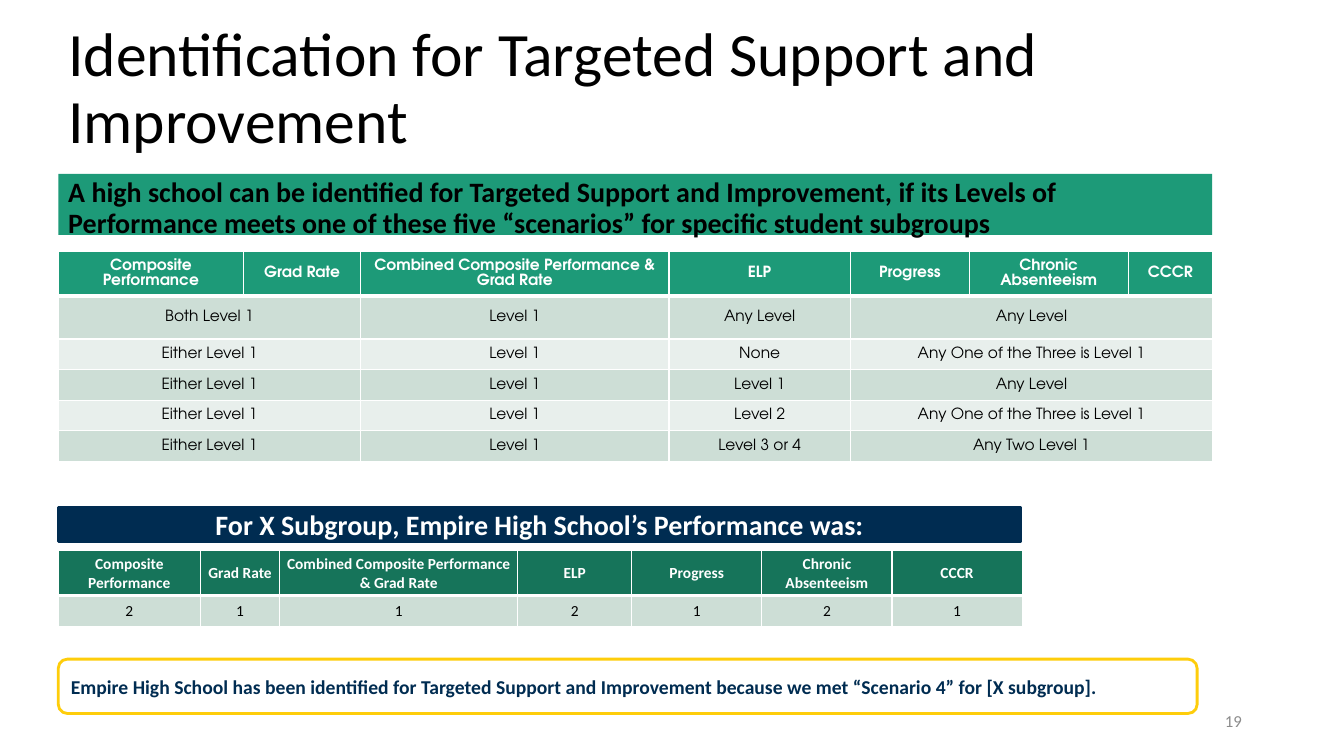
from dataclasses import dataclass

from lxml.etree import SubElement
from pptx import Presentation
from pptx.dml.color import RGBColor
from pptx.enum.shapes import MSO_SHAPE
from pptx.enum.text import MSO_ANCHOR, PP_ALIGN
from pptx.oxml.ns import qn
from pptx.slide import Slide
from pptx.table import _Cell
from pptx.text.text import TextFrame
from pptx.util import Cm, Pt


@dataclass(frozen=True)
class Theme:
    sans: str = "Calibri"
    geometric: str = "TeX Gyre Adventor"
    black: str = "000000"
    white: str = "FFFFFF"
    grey: str = "8C8C8C"
    green: str = "1D9A78"
    dark_green: str = "16745A"
    bands: tuple[str, str] = ("CDDED6", "E8EFEC")
    navy: str = "002C51"
    yellow: str = "FECD0B"
    title: int = 44
    heading: int = 20
    callout: int = 14
    page: int = 12
    table: int = 11


THEME = Theme()
LEFT = 1.47


@dataclass(frozen=True)
class Style:
    size: int
    color: str
    bold: bool = False
    font: str = THEME.sans
    align: PP_ALIGN = PP_ALIGN.LEFT
    anchor: MSO_ANCHOR = MSO_ANCHOR.MIDDLE
    spacing: float = 1.0


@dataclass(frozen=True)
class Block:
    text: str
    box: tuple[float, float, float, float]
    style: Style
    shape: MSO_SHAPE | None = None
    fill: str = THEME.white
    line: str | None = None


@dataclass(frozen=True)
class Grid:
    top: float
    widths: list[float]
    heights: list[float]
    header: list[str]
    rows: list[list[str]]
    spans: list[int]  # columns taken by each entry of a body row
    header_fill: str
    font: str


def write(frame: TextFrame, text: str, style: Style) -> None:
    frame.word_wrap = True
    frame.vertical_anchor = style.anchor
    paragraph = frame.paragraphs[0]
    paragraph.alignment = style.align
    paragraph.line_spacing = style.spacing
    run = paragraph.add_run()
    run.text = text
    run.font.name = style.font
    run.font.size = Pt(style.size)
    run.font.bold = style.bold
    run.font.color.rgb = RGBColor.from_string(style.color)


def draw_block(slide: Slide, block: Block) -> None:
    box = [Cm(length) for length in block.box]
    if block.shape is None:
        write(slide.shapes.add_textbox(*box).text_frame, block.text, block.style)
        return
    panel = slide.shapes.add_shape(block.shape, *box)
    panel.shadow.inherit = False
    panel.fill.solid()
    panel.fill.fore_color.rgb = RGBColor.from_string(block.fill)
    if block.line:
        panel.line.color.rgb = RGBColor.from_string(block.line)
        panel.line.width = Pt(2)
    else:
        panel.line.fill.background()
    write(panel.text_frame, block.text, block.style)


def format_cell(cell: _Cell, fill: str, top: int, bottom: int) -> None:
    cell.margin_left = cell.margin_right = Cm(0.18)
    cell.margin_top = cell.margin_bottom = Cm(0.1)
    cell.vertical_anchor = MSO_ANCHOR.MIDDLE
    cell.fill.solid()
    cell.fill.fore_color.rgb = RGBColor.from_string(fill)
    properties = cell._tc.get_or_add_tcPr()
    # Borders have to stand before the fill
    edges = {"lnL": 1, "lnR": 1, "lnT": top, "lnB": bottom}
    for position, (edge, width) in enumerate(edges.items()):
        border = SubElement(properties, qn(f"a:{edge}"), w=str(Pt(width)))
        solid = SubElement(border, qn("a:solidFill"))
        SubElement(solid, qn("a:srgbClr"), val=THEME.white)
        properties.insert(position, border)


def draw_grid(slide: Slide, grid: Grid) -> None:
    table = slide.shapes.add_table(
        len(grid.heights), len(grid.widths), Cm(LEFT), Cm(grid.top),
        Cm(sum(grid.widths)), Cm(sum(grid.heights))).table
    table.horz_banding = False
    for column, width in zip(table.columns, grid.widths):
        column.width = Cm(width)
    for row, height in zip(table.rows, grid.heights):
        row.height = Cm(height)
    for r, entries in enumerate([grid.header, *grid.rows]):
        is_header = r == 0
        fill = grid.header_fill if is_header else THEME.bands[(r - 1) % 2]
        for c in range(len(grid.widths)):
            format_cell(table.cell(r, c), fill, 3 if r == 1 else 1,
                        3 if is_header else 1)
        style = Style(THEME.table, THEME.white if is_header else THEME.black,
                      is_header, grid.font, PP_ALIGN.CENTER)
        spans = [1] * len(entries) if is_header else grid.spans
        start = 0
        for text, span in zip(entries, spans):
            cell = table.cell(r, start)
            if span > 1:
                cell.merge(table.cell(r, start + span - 1))
            write(cell.text_frame, text, style)
            start += span


MEASURES = ["Composite Performance", "Grad Rate",
            "Combined Composite Performance & Grad Rate", "ELP", "Progress",
            "Chronic Absenteeism", "CCCR"]

BLOCKS = [
    # Title
    Block("Identification for Targeted Support and Improvement",
          (LEFT, 0.18, 26.64, 4.19),
          Style(THEME.title, THEME.black, spacing=0.9)),
    # Rule for identification
    Block("A high school can be identified for Targeted Support and Improvement, "
          "if its Levels of Performance meets one of these five “scenarios” "
          "for specific student subgroups",
          (LEFT, 4.38, 29.08, 1.54),
          Style(THEME.heading, THEME.black, True, anchor=MSO_ANCHOR.TOP,
                spacing=0.9),
          MSO_SHAPE.RECTANGLE, THEME.green),
    # Heading of the example
    Block("For X Subgroup, Empire High School’s Performance was:",
          (LEFT, 12.78, 24.26, 0.86),
          Style(THEME.heading, THEME.white, True, align=PP_ALIGN.CENTER),
          MSO_SHAPE.RECTANGLE, THEME.navy, THEME.navy),
    # Conclusion
    Block("Empire High School has been identified for Targeted Support and "
          "Improvement because we met “Scenario 4” for [X subgroup].",
          (LEFT, 16.61, 28.7, 1.37), Style(THEME.callout, THEME.navy, True),
          MSO_SHAPE.ROUNDED_RECTANGLE, THEME.white, THEME.yellow),
    # Page number
    Block("19", (23.93, 17.65, 7.62, 1.02),
          Style(THEME.page, THEME.grey, align=PP_ALIGN.RIGHT)),
]

GRIDS = [
    # Five scenarios
    Grid(6.33, [4.67, 2.95, 7.77, 4.57, 3.0, 4.0, 2.13],
         [1.1, 1.08] + [0.77] * 4, MEASURES,
         [["Both Level 1", "Level 1", "Any Level", "Any Level"],
          ["Either Level 1", "Level 1", "None", "Any One of the Three is Level 1"],
          ["Either Level 1", "Level 1", "Level 1", "Any Level"],
          ["Either Level 1", "Level 1", "Level 2", "Any One of the Three is Level 1"],
          ["Either Level 1", "Level 1", "Level 3 or 4", "Any Two Level 1"]],
         [2, 1, 1, 3], THEME.green, THEME.geometric),
    # Levels of the example school
    Grid(13.87, [3.58, 2.0, 6.0, 2.87] + [3.28] * 3, [1.1, 0.78], MEASURES,
         [["2", "1", "1", "2", "1", "2", "1"]], [1] * 7,
         THEME.dark_green, THEME.sans),
]


def main() -> None:
    deck = Presentation()
    deck.slide_width, deck.slide_height = Cm(33.87), Cm(19.05)
    slide = deck.slides.add_slide(deck.slide_layouts[6])
    for block in BLOCKS:
        draw_block(slide, block)
    for grid in GRIDS:
        draw_grid(slide, grid)
    deck.save("out.pptx")


if __name__ == "__main__":
    main()
